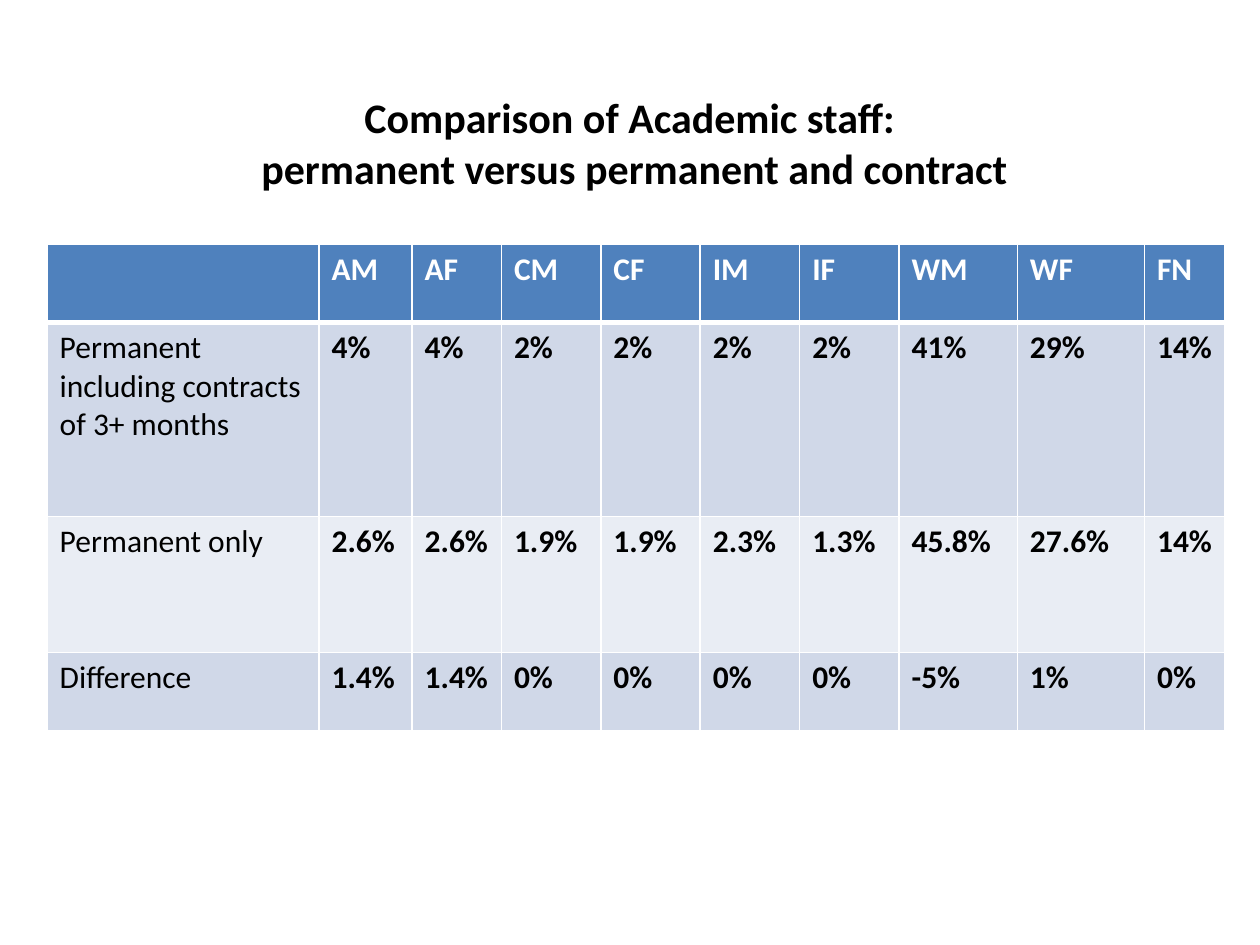
from dataclasses import dataclass

from lxml.etree import SubElement
from pptx import Presentation
from pptx.dml.color import RGBColor
from pptx.enum.text import MSO_AUTO_SIZE, PP_ALIGN
from pptx.oxml.ns import qn
from pptx.util import Cm, Pt


@dataclass(frozen=True)
class Theme:
    font: str = "Calibri"
    title_size: int = 24
    cell_size: int = 18
    ink: str = "000000"
    paper: str = "FFFFFF"
    header: str = "4F81BD"
    bands: tuple = ("D0D8E8", "E9EDF4")
    rule: int = 1
    header_rule: int = 3


THEME = Theme()

TITLE_LINES = (
    "Comparison of Academic staff: ",
    "permanent versus permanent and contract",
)
STAFF_SHARES = (
    ("", "AM", "AF", "CM", "CF", "IM", "IF", "WM", "WF", "FN"),
    ("Permanent including contracts of 3+ months",
     "4%", "4%", "2%", "2%", "2%", "2%", "41%", "29%", "14%"),
    ("Permanent only",
     "2.6%", "2.6%", "1.9%", "1.9%", "2.3%", "1.3%", "45.8%", "27.6%", "14%"),
    ("Difference",
     "1.4%", "1.4%", "0%", "0%", "0%", "0%", "-5%", "1%", "0%"),
)
# Relative shares of the table box
COLUMN_SHARES = (2.16, 0.74, 0.71, 0.79, 0.79, 0.79, 0.79, 0.94, 1.01, 0.64)
ROW_SHARES = (0.62, 1.54, 1.08, 0.62)


def add_text(paragraph, text, size, color, bold):
    run = paragraph.add_run()
    run.text = text
    run.font.name = THEME.font
    run.font.size = Pt(size)
    run.font.bold = bold
    run.font.color.rgb = RGBColor.from_string(color)


def add_border(cell, side, width):
    line = SubElement(cell._tc.get_or_add_tcPr(), qn(f"a:ln{side}"),
                      w=str(Pt(width)))
    fill = SubElement(line, qn("a:solidFill"))
    SubElement(fill, qn("a:srgbClr"), val=THEME.paper)


def build_title(slide, left, top, width, height):
    frame = slide.shapes.add_textbox(left, top, width, height).text_frame
    frame.word_wrap = True
    frame.auto_size = MSO_AUTO_SIZE.SHAPE_TO_FIT_TEXT
    for index, line in enumerate(TITLE_LINES):
        paragraph = frame.add_paragraph() if index else frame.paragraphs[0]
        paragraph.alignment = PP_ALIGN.CENTER
        add_text(paragraph, line, THEME.title_size, THEME.ink, True)


def style_cell(cell, text, is_header, is_label, band):
    # The heavy rule under the header also tops the first data row
    if is_header:
        borders = {"L": THEME.rule, "R": THEME.rule, "T": THEME.rule,
                   "B": THEME.header_rule}
    else:
        borders = {side: THEME.rule for side in "LRB"}
    for side, width in borders.items():
        add_border(cell, side, width)

    cell.fill.solid()
    cell.fill.fore_color.rgb = RGBColor.from_string(
        THEME.header if is_header else band)
    if text:
        add_text(cell.text_frame.paragraphs[0], text, THEME.cell_size,
                 THEME.paper if is_header else THEME.ink, not is_label)


def build_staff_table(slide, left, top, width, height):
    table = slide.shapes.add_table(len(STAFF_SHARES), len(COLUMN_SHARES),
                                   left, top, width, height).table
    for column, share in zip(table.columns, COLUMN_SHARES):
        column.width = round(width * share / sum(COLUMN_SHARES))
    for row, share in zip(table.rows, ROW_SHARES):
        row.height = round(height * share / sum(ROW_SHARES))

    for row_index, values in enumerate(STAFF_SHARES):
        band = THEME.bands[(row_index - 1) % len(THEME.bands)]
        for column_index, value in enumerate(values):
            style_cell(table.cell(row_index, column_index), value,
                       row_index == 0, column_index == 0, band)


def main():
    presentation = Presentation()
    presentation.slide_width = Cm(25.4)
    presentation.slide_height = Cm(19.05)
    slide = presentation.slides.add_slide(presentation.slide_layouts[6])

    # Heading
    build_title(slide, Cm(0.89), Cm(1.73), Cm(23.8), Cm(2.31))
    # Staff shares by group
    build_staff_table(slide, Cm(0.95), Cm(4.93), Cm(23.75), Cm(9.8))

    presentation.save("out.pptx")


if __name__ == "__main__":
    main()
